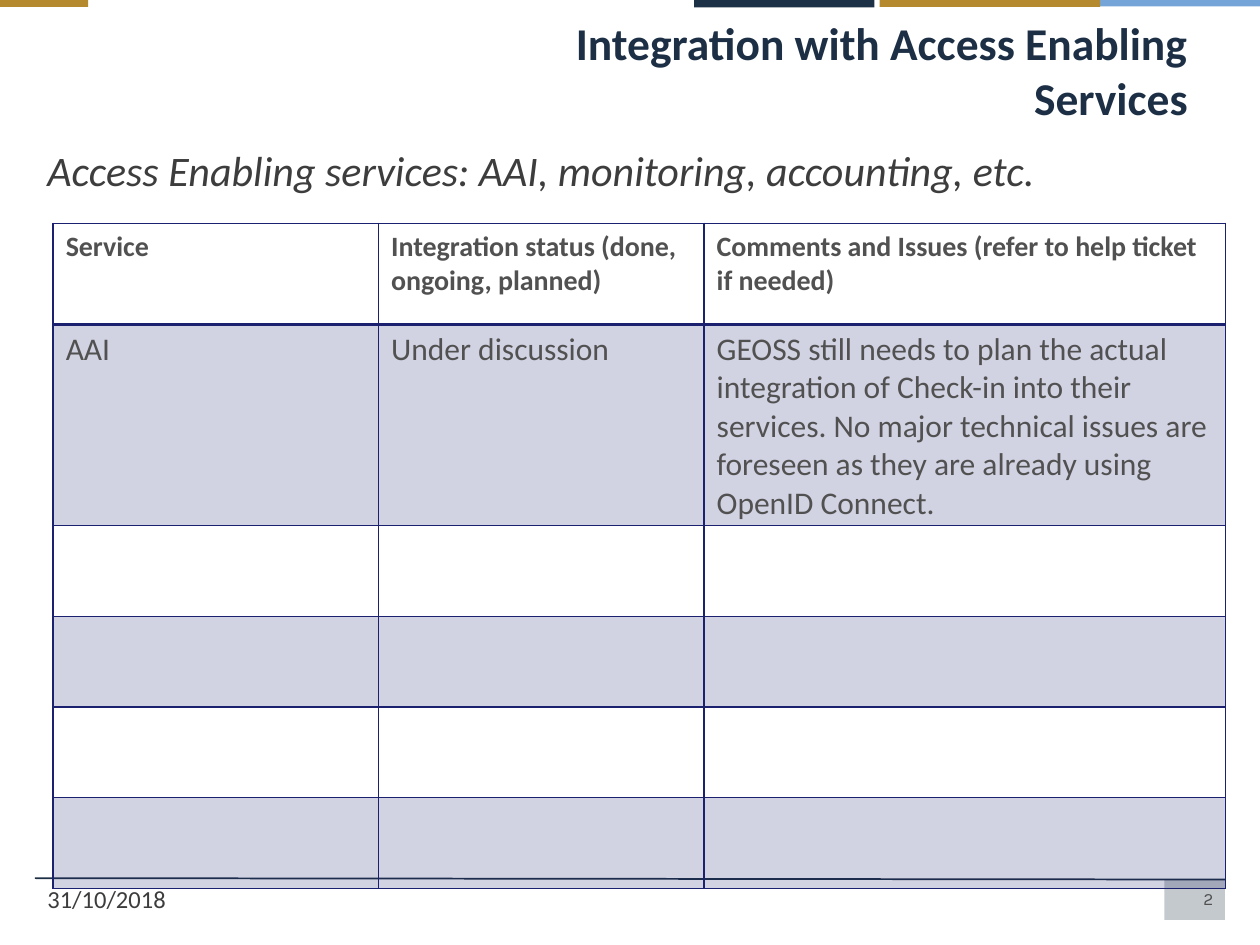
"""Build the slide on integration with access enabling services."""
from dataclasses import dataclass

from lxml import etree
from pptx import Presentation
from pptx import util as u
from pptx.dml.color import RGBColor
from pptx.enum import shapes, text
from pptx.oxml.ns import qn


@dataclass(frozen=True)
class Theme:
    navy: str = "1D2F45"
    bar: str = "1C3046"
    sky: str = "75A5D8"
    gold: str = "B5892D"
    indigo: str = "1B216E"
    dark: str = "3D3D3D"
    grey: str = "515151"
    font: str = "Calibri"
    number_font: str = "Karla"
    title: float = 26
    body: float = 24
    cell: float = 18
    head: float = 16
    date: float = 14
    number: float = 9.8


T = Theme()
MIDDLE = text.MSO_ANCHOR.MIDDLE


def paint(fill, color, opacity=100):
    fill.solid()
    fill.fore_color.rgb = RGBColor.from_string(color)
    if opacity < 100:
        clr = fill._xPr.find(qn("a:solidFill"))[0]
        etree.SubElement(clr, qn("a:alpha")).set("val", str(opacity * 1000))


def style(p, size, color, name=T.font, bold=False, italic=False):
    for f in [p.font] + [r.font for r in p.runs]:
        f.size, f.name, f.bold, f.italic = u.Pt(size), name, bold, italic
        f.color.rgb = RGBColor.from_string(color)


prs = Presentation()
prs.slide_width, prs.slide_height = u.Pt(720), u.Pt(540)
s = prs.slides.add_slide(prs.slide_layouts[6])

rule = s.shapes.add_connector(shapes.MSO_CONNECTOR.STRAIGHT,
                              u.Pt(700), u.Pt(502.6), u.Pt(20), u.Pt(501.8))
rule.line.color.rgb = RGBColor.from_string(T.navy)
rule.line.width = u.Pt(1)
etree.SubElement(rule._element.spPr, qn("a:effectLst"))

for x, y, w, h, color, opacity in [
    (665.3, 502.6, 34.6, 23, T.navy, 26),
    (396.7, 0, 103, 4.3, T.bar, 100),
    (620.6, 0, 99.4, 3.6, T.sky, 100),
    (502.6, 0, 126, 4, T.gold, 100),
    (0, 0, 50.4, 4, T.gold, 100),
]:
    sp = s.shapes.add_shape(shapes.MSO_SHAPE.RECTANGLE, u.Pt(x), u.Pt(y), u.Pt(w), u.Pt(h))
    sp.shadow.inherit = False
    paint(sp.fill, color, opacity)
    sp.line.fill.background()

for x, y, w, h, words, align, anchor, inset, look in [
    (516.2, 502.6, 184.3, 22.3, "2", text.PP_ALIGN.RIGHT, MIDDLE, 7.2,
     dict(size=T.number, color=T.grey, name=T.number_font)),
    (20, 79.2, 680.4, 59, "Access Enabling services: AAI, monitoring, accounting, etc.",
     text.PP_ALIGN.LEFT, text.MSO_ANCHOR.TOP, 7.2,
     dict(size=T.body, color=T.dark, italic=True)),
    (20, 502.6, 167.8, 22.3, "31/10/2018", text.PP_ALIGN.LEFT, MIDDLE, 7.2,
     dict(size=T.date, color=T.dark)),
    (229, 20.2, 470.9, 39.6, "Integration with Access Enabling Services",
     text.PP_ALIGN.RIGHT, MIDDLE, 21, dict(size=T.title, color=T.navy, bold=True)),
]:
    tf = s.shapes.add_textbox(u.Pt(x), u.Pt(y), u.Pt(w), u.Pt(h)).text_frame
    tf.word_wrap = True
    tf.vertical_anchor = anchor
    tf.margin_right = u.Pt(inset)
    tf.text = words
    p = tf.paragraphs[0]
    p.alignment = align
    style(p, **look)

rows = [
    ["Service", "Integration status (done, ongoing, planned)",
     "Comments and Issues (refer to help ticket if needed)"],
    ["AAI", "Under discussion",
     "GEOSS still needs to plan the actual integration of Check-in into their services. "
     "No major technical issues are foreseen as they are already using OpenID Connect."],
] + [[""] * 3] * 4
widths = [186, 186, 298]
heights = [57.6] + [51.8] * 5

table = s.shapes.add_table(len(rows), len(widths), u.Pt(30.4), u.Pt(127.6),
                           u.Pt(sum(widths)), u.Pt(sum(heights))).table
table.first_row = table.horz_banding = False
for column, width in zip(table.columns, widths):
    column.width = u.Pt(width)
for i, (row, height) in enumerate(zip(rows, heights)):
    table.rows[i].height = u.Pt(height)
    for j, words in enumerate(row):
        cell = table.cell(i, j)
        cell.text = words
        style(cell.text_frame.paragraphs[0], T.cell if i else T.head, T.grey, bold=i == 0)
        if i % 2:
            paint(cell.fill, T.indigo, 20)
        else:
            cell.fill.background()
        tcPr = cell._tc.get_or_add_tcPr()
        for k, side in enumerate("LRTB"):
            heavy = (i, side) in [(0, "B"), (1, "T")]
            ln = etree.Element(qn(f"a:ln{side}"), w=str(u.Pt(2 if heavy else 1)))
            solid = etree.SubElement(ln, qn("a:solidFill"))
            etree.SubElement(solid, qn("a:srgbClr"), val=T.indigo)
            tcPr.insert(k, ln)

prs.save("out.pptx")
